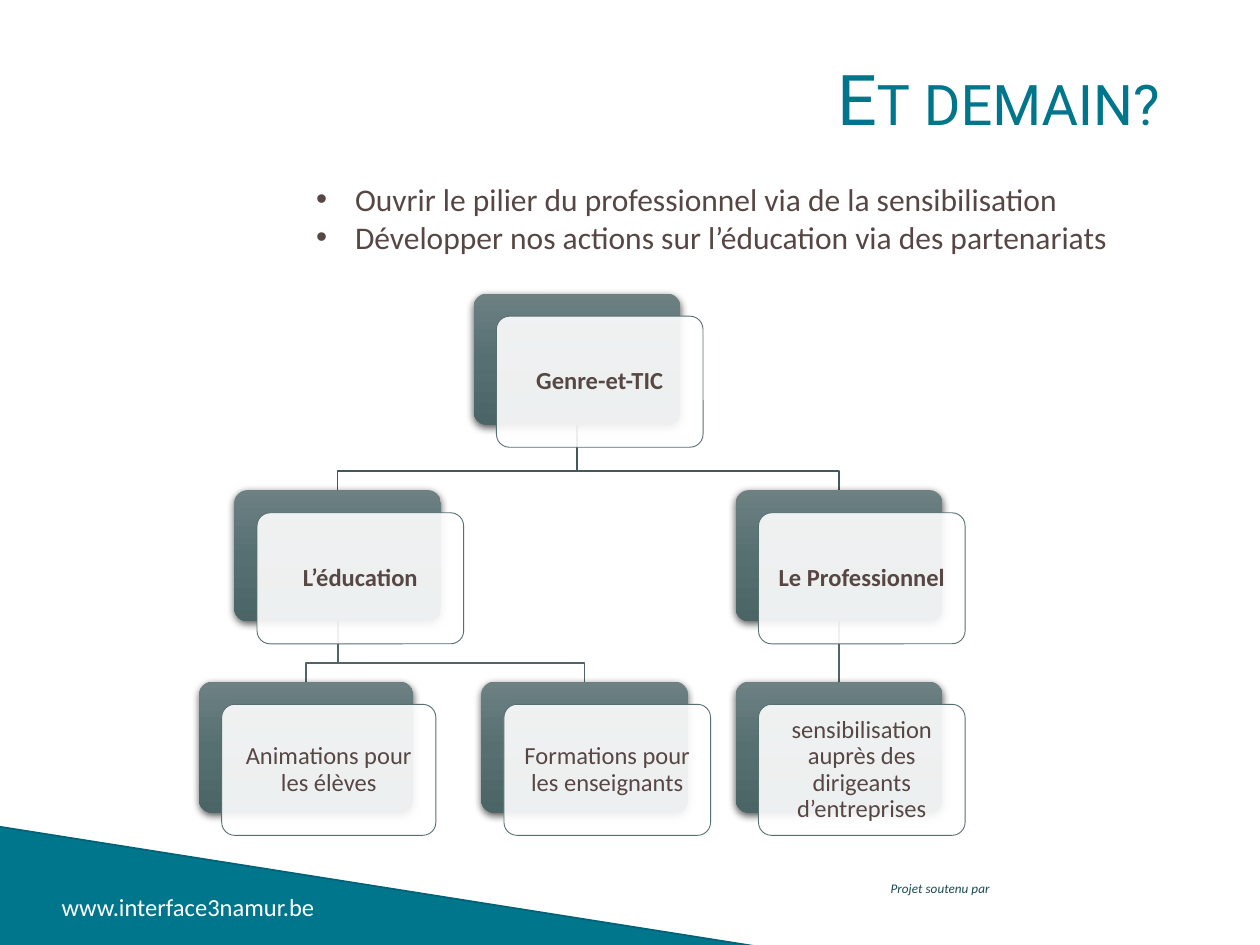
from dataclasses import dataclass

from lxml.etree import SubElement
from pptx import Presentation
from pptx.dml.color import RGBColor
from pptx.enum.shapes import MSO_CONNECTOR, MSO_SHAPE
from pptx.enum.text import MSO_ANCHOR, PP_ALIGN
from pptx.oxml.ns import qn
from pptx.util import Inches, Pt

SLIDE_WIDTH, SLIDE_HEIGHT = Inches(10), Inches(7.5)
GRID_COLUMNS = 100
CELL = SLIDE_WIDTH // GRID_COLUMNS

TEAL = RGBColor(0x00, 0x76, 0x8C)
DARK_TEAL = RGBColor(0x00, 0x62, 0x76)
DEEP_GREEN = RGBColor(0x19, 0x4B, 0x50)
BROWN = RGBColor(0x57, 0x47, 0x44)
WHITE = RGBColor(0xFF, 0xFF, 0xFF)
BLACK = RGBColor(0x00, 0x00, 0x00)
CARD_LINE = RGBColor(0x57, 0x6F, 0x71)
UPPER_LINK = RGBColor(0x46, 0x59, 0x5A)
LOWER_LINK = RGBColor(0x4F, 0x65, 0x67)
BACK_GRADIENT = (
    (0, RGBColor(0x6D, 0x80, 0x82)),
    (50, RGBColor(0x56, 0x70, 0x72)),
    (100, RGBColor(0x4B, 0x65, 0x67)),
)

LEVEL_TOPS = (23.3, 38.9, 54.1)
NODE_HEIGHT = 10.4
CARD_SHIFT = 1.8
BEND_RISE = 1.5


@dataclass
class Node:
    text: str
    left: float
    level: int
    width: float = 16.4
    bold: bool = False

    @property
    def top(self):
        return LEVEL_TOPS[self.level]

    @property
    def center(self):
        return self.left + self.width / 2

    @property
    def bottom(self):
        return self.top + NODE_HEIGHT


def cells(*counts):
    return [round(count * CELL) for count in counts]


def apply(target, values):
    for name, value in values.items():
        setattr(target, name, value)


def set_alpha(color_element, percent):
    SubElement(color_element, qn("a:alpha"), val=str(percent * 1000))


def write(box, lines, font, para_format=None, frame_format=None, bullet=False, small_caps=False):
    frame = box.text_frame
    apply(frame, {"word_wrap": True, **(frame_format or {})})
    for index, line in enumerate(lines):
        para = frame.paragraphs[0] if index == 0 else frame.add_paragraph()
        apply(para, para_format or {})
        if bullet:
            properties = para._p.get_or_add_pPr()
            properties.set("marL", str(Inches(0.31)))
            properties.set("indent", str(-Inches(0.31)))
            SubElement(properties, qn("a:buFont"), typeface="Arial")
            SubElement(properties, qn("a:buChar"), char="•")
        span = para.add_run()
        span.text = line
        settings = dict(font)
        span.font.color.rgb = settings.pop("color")
        apply(span.font, settings)
        if small_caps:
            span.font._element.set("cap", "small")


def add_text(page, place, lines, font, **options):
    box = page.shapes.add_textbox(*cells(*place))
    write(box, lines, font, **options)


def add_shape(page, kind, place, adjustment, line=None, line_width=1):
    shape = page.shapes.add_shape(kind, *cells(*place))
    shape.adjustments[0] = adjustment
    shape.shadow.inherit = False
    if line is None:
        shape.line.fill.background()
    else:
        shape.line.color.rgb = line
        shape.line.width = Pt(line_width)
    return shape


def add_corner(page):
    corner = add_shape(page, MSO_SHAPE.ISOSCELES_TRIANGLE, (-1.4, 65.4, 65.8, 10.4), 0, DARK_TEAL)
    corner.fill.solid()
    corner.fill.fore_color.rgb = TEAL


def add_link(page, parent, child):
    color = UPPER_LINK if parent.level == 0 else LOWER_LINK
    bend = child.top - BEND_RISE
    points = [
        tuple(cells(*point))
        for point in (
            (parent.center, parent.bottom),
            (parent.center, bend),
            (child.center, bend),
            (child.center, child.top),
        )
    ]
    if parent.center == child.center:
        link = page.shapes.add_connector(MSO_CONNECTOR.STRAIGHT, *points[0], *points[-1])
        SubElement(link._element.spPr, qn("a:effectLst"))
    else:
        builder = page.shapes.build_freeform(*points[0])
        builder.add_line_segments(points[1:], close=False)
        link = builder.convert_to_shape()
        link.fill.background()
        link.shadow.inherit = False
    link.line.color.rgb = color
    link.line.width = Pt(1)


def paint_back(shape):
    shape.fill.gradient()
    shape.fill.gradient_angle = 270
    stops = shape._element.spPr.find(".//" + qn("a:gsLst"))
    stops.clear()
    for position, color in BACK_GRADIENT:
        stop = SubElement(stops, qn("a:gs"), pos=str(position * 1000))
        SubElement(stop, qn("a:srgbClr"), val=str(color))
    effects = shape._element.spPr.find(qn("a:effectLst"))
    shadow = SubElement(
        effects, qn("a:outerShdw"),
        blurRad=str(Pt(4.5)), dist=str(Pt(1.5)), dir="5400000", rotWithShape="0",
    )
    set_alpha(SubElement(shadow, qn("a:srgbClr"), val=str(BLACK)), 63)


def add_node(page, node):
    size = (node.width, NODE_HEIGHT)
    back = add_shape(page, MSO_SHAPE.ROUNDED_RECTANGLE, (node.left, node.top, *size), 0.1)
    paint_back(back)
    place = (node.left + CARD_SHIFT, node.top + CARD_SHIFT, *size)
    card = add_shape(page, MSO_SHAPE.ROUNDED_RECTANGLE, place, 0.1, CARD_LINE, 0.5)
    card.fill.solid()
    card.fill.fore_color.rgb = WHITE
    set_alpha(card._element.spPr.find(qn("a:solidFill"))[0], 90)
    sides = ("left", "right", "top", "bottom")
    write(
        card, [node.text],
        {"name": "Calibri", "size": Pt(14), "bold": node.bold, "color": BROWN},
        para_format={"alignment": PP_ALIGN.CENTER, "line_spacing": 0.9},
        frame_format={
            "vertical_anchor": MSO_ANCHOR.MIDDLE,
            **{f"margin_{side}": Inches(0.06) for side in sides},
        },
    )


def add_tree(page):
    root = Node("Genre-et-TIC", 37.6, 0, bold=True)
    education = Node("L’éducation", 18.6, 1, bold=True)
    pupils = Node("Animations pour les élèves", 15.8, 2, width=17)
    teachers = Node("Formations pour les enseignants", 38.2, 2)
    work = Node("Le Professionnel", 58.4, 1, bold=True)
    leaders = Node("sensibilisation auprès des dirigeants d’entreprises", 58.4, 2)
    links = (
        (work, leaders), (root, work), (education, teachers),
        (education, pupils), (root, education),
    )
    for parent, child in links:
        add_link(page, parent, child)
    for node in (root, education, pupils, teachers, work, leaders):
        add_node(page, node)


def main():
    deck = Presentation()
    apply(deck, {"slide_width": SLIDE_WIDTH, "slide_height": SLIDE_HEIGHT})
    page = deck.slides.add_slide(deck.slide_layouts[6])
    add_corner(page)
    add_text(page, (69.7, 69.4, 25.3, 2.3), ["Projet soutenu par"],
             {"name": "Calibri", "size": Pt(7.5), "italic": True, "color": DEEP_GREEN})
    add_text(page, (3.9, 67.7, 22.6, 8.6), ["www.interface3namur.be"],
             {"name": "Calibri", "size": Pt(14), "color": WHITE},
             frame_format={"vertical_anchor": MSO_ANCHOR.MIDDLE})
    add_text(page, (24.1, 4.7, 68.9, 13.6), ["Et demain?"],
             {"name": "Roboto", "size": Pt(40), "color": TEAL},
             para_format={"alignment": PP_ALIGN.RIGHT, "line_spacing": 0.9}, small_caps=True)
    add_tree(page)
    add_text(page, (24.1, 13.8, 66.2, 7.1),
             ["Ouvrir le pilier du professionnel via de la sensibilisation",
              "Développer nos actions sur l’éducation via des partenariats"],
             {"name": "Calibri", "size": Pt(18), "color": BROWN}, bullet=True)
    deck.save("out.pptx")


if __name__ == "__main__":
    main()
